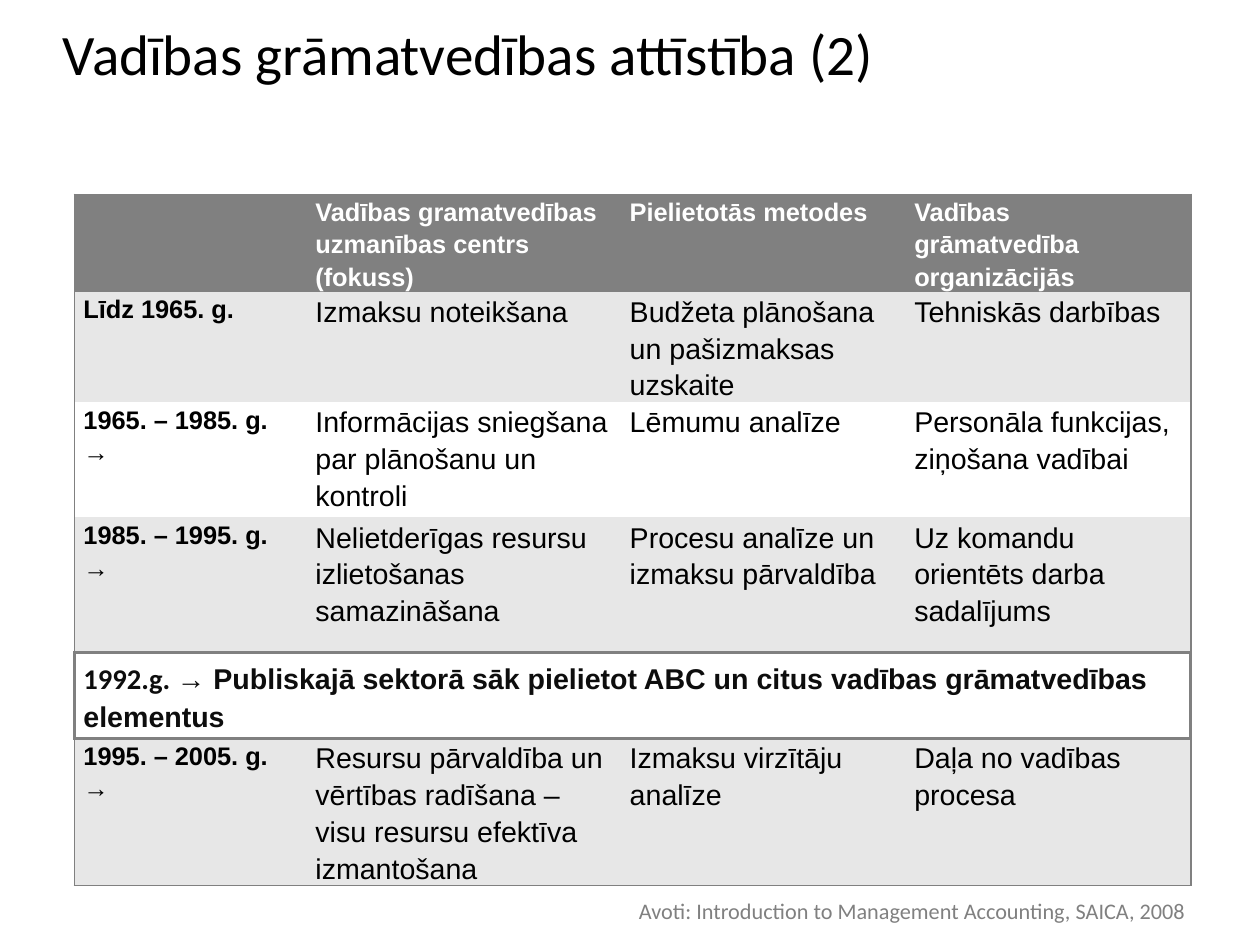
from dataclasses import dataclass

from lxml.etree import SubElement
from pptx import Presentation
from pptx.dml.color import RGBColor
from pptx.enum.text import MSO_ANCHOR, MSO_AUTO_SIZE, PP_ALIGN
from pptx.oxml.ns import qn
from pptx.util import Emu, Inches, Pt


@dataclass(frozen=True)
class Theme:
    heading_font: str = "Calibri"
    table_font: str = "Arial"
    title_size: int = 36
    body_size: int = 18
    label_size: int = 16
    source_size: int = 14
    black: str = "000000"
    near_black: str = "0D0D0D"
    white: str = "FFFFFF"
    gray: str = "808080"
    band: str = "E7E7E7"
    thin: float = 1
    thick: float = 2.25
    plain_table: str = "{2D5ABB26-0587-4C30-8999-92F81FD0307C}"


PAGE_WIDTH, PAGE_HEIGHT = Emu(10080625), Emu(7559675)
TITLE = "Vadības grāmatvedības attīstība (2)"
SOURCE = "Avoti: Introduction to Management Accounting, SAICA, 2008"
MILESTONE = ("1992.g. ", "→ Publiskajā sektorā sāk pielietot ABC un citus vadības grāmatvedības elementus")
MILESTONE_ROW = 4
ROWS = [
    ("", "Vadības gramatvedības uzmanības centrs (fokuss)", "Pielietotās metodes",
     "Vadības grāmatvedība organizācijās"),
    ("Līdz 1965. g.", "Izmaksu noteikšana", "Budžeta plānošana un pašizmaksas uzskaite",
     "Tehniskās darbības"),
    ("1965. – 1985. g. →", "Informācijas sniegšana par plānošanu un kontroli", "Lēmumu analīze",
     "Personāla funkcijas, ziņošana vadībai"),
    ("1985. – 1995. g. →", "Nelietderīgas resursu izlietošanas samazināšana",
     "Procesu analīze un izmaksu pārvaldība", "Uz komandu orientēts darba sadalījums"),
    ("", "", "", ""),
    ("1995. – 2005. g. →", "Resursu pārvaldība un vērtības radīšana – visu resursu efektīva izmantošana",
     "Izmaksu virzītāju analīze", "Daļa no vadības procesa"),
]
COLUMN_WIDTHS = (2.03, 2.75, 2.49, 2.5)
ROW_HEIGHTS = (0.85, 0.96, 1.01, 1.18, 0.75, 1.28)


class SlideBuilder:
    def __init__(self, page, theme):
        self.page = page
        self.theme = theme

    def style(self, font, name, size, color, bold=False):
        font.name, font.size, font.bold = name, Pt(size), bold
        font.color.rgb = RGBColor.from_string(color)

    def set_margins(self, box, left, top, right, bottom):
        box.margin_left, box.margin_top = Inches(left), Inches(top)
        box.margin_right, box.margin_bottom = Inches(right), Inches(bottom)

    def title(self, text):
        theme = self.theme
        title = self.page.shapes.title
        title.left, title.top = Inches(0.55), Inches(0)
        title.width, title.height = Inches(9.92), Inches(1.38)
        box = title.text_frame
        box.word_wrap, box.auto_size = True, MSO_AUTO_SIZE.NONE
        box.vertical_anchor = MSO_ANCHOR.TOP
        self.set_margins(box, 0, 0.16, 0, 0)
        para = box.paragraphs[0]
        para.text, para.alignment = text, PP_ALIGN.LEFT
        self.style(para.font, theme.heading_font, theme.title_size, theme.black)

    def source_line(self, text):
        theme = self.theme
        box = self.page.shapes.add_textbox(Inches(5.48), Inches(7.81), Inches(5.31), Inches(0.33)).text_frame
        box.word_wrap, box.auto_size = True, MSO_AUTO_SIZE.SHAPE_TO_FIT_TEXT
        self.set_margins(box, 0.11, 0.06, 0.11, 0.06)
        para = box.paragraphs[0]
        para.text, para.line_spacing = text, 0.93
        self.style(para.font, theme.heading_font, theme.source_size, theme.gray)

    def history_table(self):
        frame = self.page.shapes.add_table(len(ROW_HEIGHTS), len(COLUMN_WIDTHS), Inches(0.65), Inches(1.7),
                                           Inches(sum(COLUMN_WIDTHS)), Inches(sum(ROW_HEIGHTS)))
        frame.element.find(".//" + qn("a:tableStyleId")).text = self.theme.plain_table
        table = frame.table
        table.horz_banding = False
        for column, width in zip(table.columns, COLUMN_WIDTHS):
            column.width = Inches(width)
        for row, height in zip(table.rows, ROW_HEIGHTS):
            row.height = Inches(height)
        for row, texts in enumerate(ROWS):
            for column, text in enumerate(texts):
                self.table_cell(table.cell(row, column), row, column, text)
        self.milestone(table)

    def table_cell(self, cell, row, column, text):
        theme = self.theme
        is_header, is_label = row == 0, column == 0
        self.set_margins(cell, 0.08, 0, 0.08, 0)
        self.borders(cell, row, column)
        fill = theme.gray if is_header else theme.band if row % 2 else theme.white
        cell.fill.solid()
        cell.fill.fore_color.rgb = RGBColor.from_string(fill)
        if text:
            para = cell.text_frame.paragraphs[0]
            para.text, para.line_spacing = text, 1.15
            self.style(para.font, theme.table_font,
                       theme.label_size if is_header or is_label else theme.body_size,
                       theme.white if is_header else theme.black, is_header or is_label)

    def borders(self, cell, row, column):
        """Thin lines around the table, thick ones around the milestone row."""
        theme = self.theme
        last_row, last_column = len(ROW_HEIGHTS) - 1, len(COLUMN_WIDTHS) - 1
        is_milestone = row == MILESTONE_ROW
        side = theme.thick if is_milestone else theme.thin
        widths = {
            "L": side if column == 0 else 0,
            "R": side if is_milestone or column == last_column else 0,
            "T": self.edge(row, row == 0),
            "B": self.edge(row + 1, row == last_row),
        }
        properties = cell._tc.get_or_add_tcPr()
        for name, width in widths.items():
            if width:
                line = SubElement(properties, qn("a:ln" + name), w=str(Pt(width)))
                fill = SubElement(line, qn("a:solidFill"))
                SubElement(fill, qn("a:srgbClr"), val=theme.gray)

    def edge(self, boundary, is_outer):
        """Width of the horizontal line above the row numbered boundary."""
        if boundary in (MILESTONE_ROW, MILESTONE_ROW + 1):
            return self.theme.thick
        return self.theme.thin if is_outer else 0

    def milestone(self, table):
        theme = self.theme
        cell = table.cell(MILESTONE_ROW, 0)
        cell.merge(table.cell(MILESTONE_ROW, len(COLUMN_WIDTHS) - 1))
        cell.vertical_anchor = MSO_ANCHOR.MIDDLE
        para = cell.text_frame.paragraphs[0]
        para.line_spacing, para.space_after = 1.15, Pt(6)
        for text, name in zip(MILESTONE, (theme.heading_font, theme.table_font)):
            span = para.add_run()
            span.text = text
            self.style(span.font, name, theme.body_size, theme.near_black, True)


def main():
    deck = Presentation()
    deck.slide_width, deck.slide_height = PAGE_WIDTH, PAGE_HEIGHT
    page = deck.slides.add_slide(deck.slide_layouts[5])
    builder = SlideBuilder(page, Theme())
    builder.title(TITLE)
    builder.history_table()
    builder.source_line(SOURCE)
    deck.save("out.pptx")


if __name__ == "__main__":
    main()
